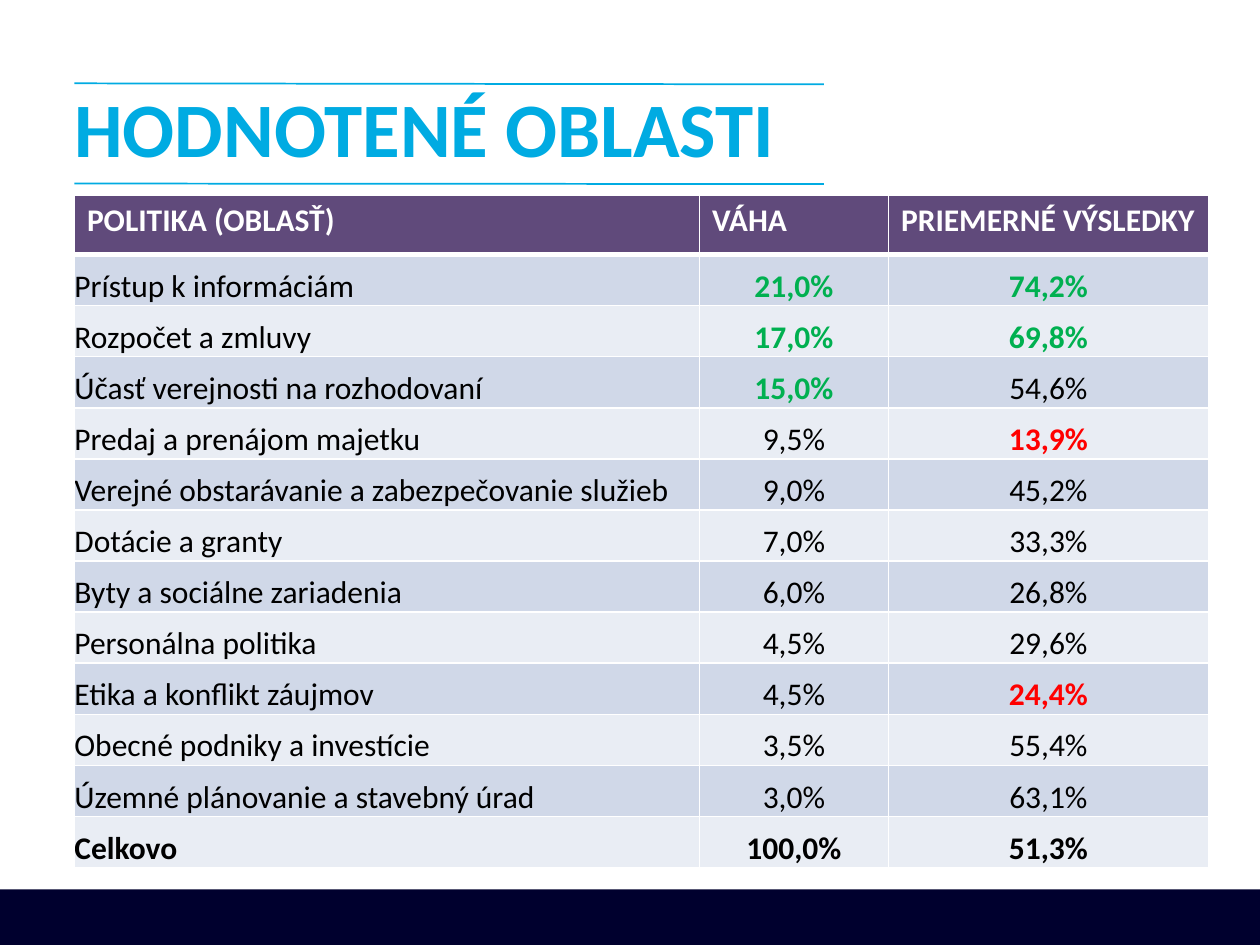
from dataclasses import dataclass

from lxml import etree
from pptx import Presentation
from pptx.dml.color import RGBColor
from pptx.enum.shapes import MSO_CONNECTOR, MSO_SHAPE
from pptx.enum.text import MSO_ANCHOR, PP_ALIGN
from pptx.oxml.ns import qn
from pptx.util import Cm, Pt

STRAIGHT = MSO_CONNECTOR.STRAIGHT
RECTANGLE = MSO_SHAPE.RECTANGLE
MIDDLE, BOTTOM = MSO_ANCHOR.MIDDLE, MSO_ANCHOR.BOTTOM
LEFT, CENTER = PP_ALIGN.LEFT, PP_ALIGN.CENTER


@dataclass(frozen=True)
class Theme:
    font: str = "Calibri"
    title_size: int = 44
    table_size: int = 18
    accent: str = "00ABE2"
    footer: str = "00002E"
    header: str = "604A7B"
    bands: tuple = ("D0D8E8", "E9EDF4")
    white: str = "FFFFFF"
    text: str = "000000"
    good: str = "00B050"
    bad: str = "FF0000"


THEME = Theme()

HEADINGS = ("POLITIKA (OBLASŤ)", "VÁHA", "PRIEMERNÉ VÝSLEDKY")
# Policy area, weight in %, average result in %
AREAS = (
    ("Prístup k informáciám", 21.0, 74.2),
    ("Rozpočet a zmluvy", 17.0, 69.8),
    ("Účasť verejnosti na rozhodovaní", 15.0, 54.6),
    ("Predaj a prenájom majetku", 9.5, 13.9),
    ("Verejné obstarávanie a zabezpečovanie služieb", 9.0, 45.2),
    ("Dotácie a granty", 7.0, 33.3),
    ("Byty a sociálne zariadenia", 6.0, 26.8),
    ("Personálna politika", 4.5, 29.6),
    ("Etika a konflikt záujmov", 4.5, 24.4),
    ("Obecné podniky a investície", 3.5, 55.4),
    ("Územné plánovanie a stavebný úrad", 3.0, 63.1),
)
TOTAL = ("Celkovo", 100.0, 51.3)
HIGH_WEIGHT = 15
HIGH_RESULT, LOW_RESULT = 65, 25


def rgb(value):
    return RGBColor.from_string(value)


def percent(value):
    return f"{value:.1f}%".replace(".", ",")


def add_run(paragraph, text, size, color, bold=False):
    run = paragraph.add_run()
    run.text = text
    run.font.name = THEME.font
    run.font.size = Pt(size)
    run.font.bold = bold
    run.font.color.rgb = rgb(color)


def add_footer(slide, left, top, width, height):
    band = slide.shapes.add_shape(RECTANGLE, Cm(left), Cm(top), Cm(width), Cm(height))
    band.shadow.inherit = False
    band.fill.solid()
    band.fill.fore_color.rgb = rgb(THEME.footer)
    band.line.fill.background()


def add_title(slide, left, top, width, height):
    # Rules above and below; the upper one slopes very slightly
    rule_end = left + 15.11
    for start_y, end_y in ((0.11, 0.13), (2.13, 2.14)):
        rule = slide.shapes.add_connector(
            STRAIGHT, Cm(left), Cm(top + start_y), Cm(rule_end), Cm(top + end_y))
        rule.line.color.rgb = rgb(THEME.accent)
        rule.line.width = Pt(1)
        etree.SubElement(rule._element.spPr, qn("a:effectLst"))

    heading = slide.shapes.add_textbox(Cm(left), Cm(top), Cm(width), Cm(height))
    frame = heading.text_frame
    frame.word_wrap = True
    frame.vertical_anchor = MIDDLE
    frame.margin_left = frame.margin_right = frame.margin_top = frame.margin_bottom = 0
    frame.paragraphs[0].line_spacing = 0.9
    add_run(frame.paragraphs[0], "HODNOTENÉ OBLASTI", THEME.title_size, THEME.accent, True)


def set_borders(cell, top=1, bottom=1):
    properties = cell._tc.get_or_add_tcPr()
    for side, points in (("L", 1), ("R", 1), ("T", top), ("B", bottom)):
        border = etree.SubElement(properties, qn(f"a:ln{side}"), w=str(Pt(points)))
        fill = etree.SubElement(border, qn("a:solidFill"))
        etree.SubElement(fill, qn("a:srgbClr"), val=THEME.white)


def fill_cell(cell, text, fill, color, bold, align=LEFT):
    cell.fill.solid()
    cell.fill.fore_color.rgb = rgb(fill)
    paragraph = cell.text_frame.paragraphs[0]
    paragraph.alignment = align
    add_run(paragraph, text, THEME.table_size, color, bold)


def value_colors(weight, result):
    weight_color = THEME.good if weight >= HIGH_WEIGHT else THEME.text
    if result >= HIGH_RESULT:
        return weight_color, THEME.good
    return weight_color, THEME.bad if result <= LOW_RESULT else THEME.text


def add_results_table(slide, left, top, width, height):
    rows = (*AREAS, TOTAL)
    header_height = 1.19
    row_height = (height - header_height) / len(rows)
    table = slide.shapes.add_table(
        len(rows) + 1, len(HEADINGS), Cm(left), Cm(top), Cm(width), Cm(height)).table
    table.horz_banding = False

    area_width, weight_width = 12.6, 3.81
    column_widths = (area_width, weight_width, width - area_width - weight_width)
    for column, column_width in zip(table.columns, column_widths):
        column.width = Cm(column_width)
    for index, row in enumerate(table.rows):
        row.height = Cm(row_height if index else header_height)

    # Header row
    for column, heading in enumerate(HEADINGS):
        cell = table.cell(0, column)
        set_borders(cell, bottom=3)
        fill_cell(cell, heading, THEME.header, THEME.white, True)

    # Areas and total, with strong and weak values highlighted
    for index, (area, weight, result) in enumerate(rows):
        is_total = index == len(AREAS)
        highlights = (THEME.text,) * 2 if is_total else value_colors(weight, result)
        texts = (area, percent(weight), percent(result))
        for column, (text, color) in enumerate(zip(texts, (THEME.text, *highlights))):
            cell = table.cell(index + 1, column)
            cell.vertical_anchor = BOTTOM
            cell.margin_left = cell.margin_right = cell.margin_top = cell.margin_bottom = 0
            set_borders(cell, top=1 if index else 3)
            fill_cell(cell, text, THEME.bands[index % 2], color,
                      is_total or color != THEME.text, CENTER if column else LEFT)


def main():
    presentation = Presentation()
    presentation.slide_width, presentation.slide_height = Cm(25.4), Cm(19.05)
    slide = presentation.slides.add_slide(presentation.slide_layouts[6])
    add_footer(slide, 0, 17.93, 25.4, 1.12)
    add_title(slide, 1.5, 1.57, 17.6, 2.21)
    add_results_table(slide, 1.5, 3.94, 22.86, 13.56)
    presentation.save("out.pptx")


if __name__ == "__main__":
    main()
